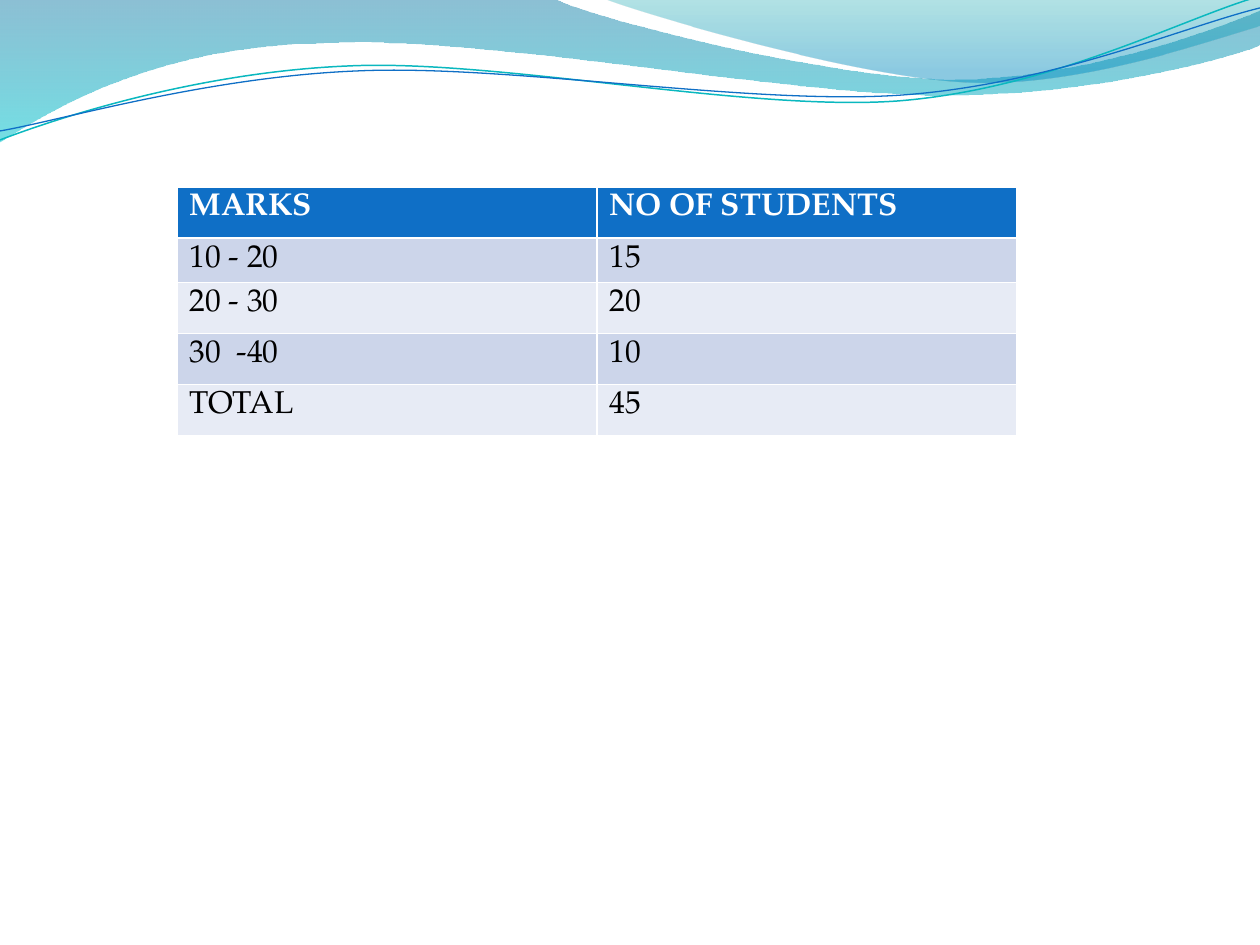
"""Build a slide with a marks frequency table under a wave banner."""
from math import cos, radians, sin
from lxml.etree import SubElement
from pptx import Presentation
from pptx.dml.color import RGBColor
from pptx.oxml.ns import qn
from pptx.util import Pt

PX = 7257.6
THEME = {
    "font": "TeX Gyre Pagella", "size": 18,
    "header": {"fill": "0F6FC6", "text": "FFFFFF"},
    "bands": [{"fill": "CCD5EA", "text": "000000"}, {"fill": "E7EBF5", "text": "000000"}],
    "teal_wave": [(0, "0074A1", 45), (1, "00C6CF", 55)],
    "blue_wave": [(0, "00A1A9", 30), (0.8, "008BBF", 45)],
    "teal_line": ("0AB8BF", 0.85), "blue_line": ("0F6FC6", 0.75),
}
ROWS = [
    ("MARKS", "NO OF STUDENTS"),
    ("10 - 20", "15"),
    ("20 - 30", "20"),
    ("30  -40", "10"),
    ("TOTAL", "45"),
]
TABLE = {"left": 177, "top": 187, "column": 420, "heights": [51, 42, 51, 51, 51]}
WAVES = [
    {"frame": (-1, -1, 1262, 143), "turn": 0, "stops": THEME["teal_wave"], "start": (0, 0),
     "path": [[(554, -1)], [(600, 21), (837, 79), (955, 79)], [(1075, 79), (1207, 33), (1260, 11)],
              [(1261, 45)], [(1239, 55), (1096, 96), (940, 95)], [(784, 95), (481, 35), (324, 43)],
              [(163, 45), (58, 105), (-1, 142)]]},
    {"frame": (604, -1, 656, 88), "turn": 0, "stops": THEME["blue_wave"], "start": (604, -1),
     "path": [[(641, 14), (859, 78), (969, 82)], [(1079, 87), (1211, 40), (1260, 26)], [(1260, 0)]]},
    {"frame": (-2, 28, 1263, 89), "turn": 357.3, "line": THEME["teal_line"], "start": (0, 140),
     "path": [[(60, 117), (199, 72), (349, 66)], [(498, 59), (747, 112), (898, 101)],
              [(1050, 89), (1182, 19), (1257, -3)]]},
    {"frame": (-2, 38, 1264, 73), "turn": 357.3, "line": THEME["blue_line"], "start": (0, 131),
     "path": [[(59, 121), (207, 77), (357, 71)], [(508, 64), (752, 106), (903, 95)],
              [(1053, 84), (1186, 26), (1260, 8)]]},
]


def px(value):
    return round(value * PX)


def color(code):
    return RGBColor.from_string(code)


def to_frame(point, frame, turn):
    left, top, width, height = frame
    x, y = point[0] - left - width / 2, point[1] - top - height / 2
    angle = radians(-turn)
    return (px(x * cos(angle) - y * sin(angle) + width / 2),
            px(x * sin(angle) + y * cos(angle) + height / 2))


def draw_curves(shape, wave):
    outline = next(shape.element.iter(qn("a:path")))
    for child in list(outline):
        outline.remove(child)
    outline.set("w", str(px(wave["frame"][2])))
    outline.set("h", str(px(wave["frame"][3])))
    if "line" in wave:
        outline.set("fill", "none")
    for index, segment in enumerate([[wave["start"]], *wave["path"]]):
        kind = "moveTo" if index == 0 else "lnTo" if len(segment) == 1 else "cubicBezTo"
        command = SubElement(outline, qn(f"a:{kind}"))
        for point in segment:
            x, y = to_frame(point, wave["frame"], wave["turn"])
            SubElement(command, qn("a:pt"), x=str(x), y=str(y))
    if "stops" in wave:
        SubElement(outline, qn("a:close"))


def add_wave(slide, wave):
    builder = slide.shapes.build_freeform(0, 0)
    builder.add_line_segments([(px(1), px(1))], close=False)
    shape = builder.convert_to_shape()
    for name, value in zip(("left", "top", "width", "height"), wave["frame"]):
        setattr(shape, name, px(value))
    shape.rotation = wave["turn"]
    shape.shadow.inherit = False
    draw_curves(shape, wave)
    if "line" in wave:
        code, width = wave["line"]
        shape.fill.background()
        shape.line.color.rgb = color(code)
        shape.line.width = Pt(width)
        return
    shape.line.fill.background()
    shape.fill.gradient()
    shape.fill.gradient_angle = 270
    for stop, (position, code, opacity) in zip(shape.fill.gradient_stops, wave["stops"]):
        stop.position = position
        stop.color.rgb = color(code)
    for tint, (_, _, opacity) in zip(shape.element.spPr.iter(qn("a:srgbClr")), wave["stops"]):
        SubElement(tint, qn("a:alpha"), val=str(opacity * 1000))


def fill_cell(cell, text, style, is_header):
    cell.fill.solid()
    cell.fill.fore_color.rgb = color(style["fill"])
    span = cell.text_frame.paragraphs[0].add_run()
    span.text = text
    font = {"name": THEME["font"], "size": Pt(THEME["size"]), "bold": is_header}
    for name, value in font.items():
        setattr(span.font, name, value)
    span.font.color.rgb = color(style["text"])


def add_marks_table(slide):
    columns = len(ROWS[0])
    frame = slide.shapes.add_table(
        len(ROWS), columns, px(TABLE["left"]), px(TABLE["top"]),
        px(TABLE["column"] * columns), px(sum(TABLE["heights"])))
    table = frame.table
    for column in table.columns:
        column.width = px(TABLE["column"])
    for index, (texts, height) in enumerate(zip(ROWS, TABLE["heights"])):
        table.rows[index].height = px(height)
        style = THEME["bands"][(index - 1) % 2] if index else THEME["header"]
        for position, text in enumerate(texts):
            fill_cell(table.cell(index, position), text, style, index == 0)


def main():
    deck = Presentation()
    deck.slide_width, deck.slide_height = px(1260), px(945)
    slide = deck.slides.add_slide(deck.slide_layouts[6])
    for wave in WAVES:
        add_wave(slide, wave)
    add_marks_table(slide)
    deck.save("out.pptx")


if __name__ == "__main__":
    main()
